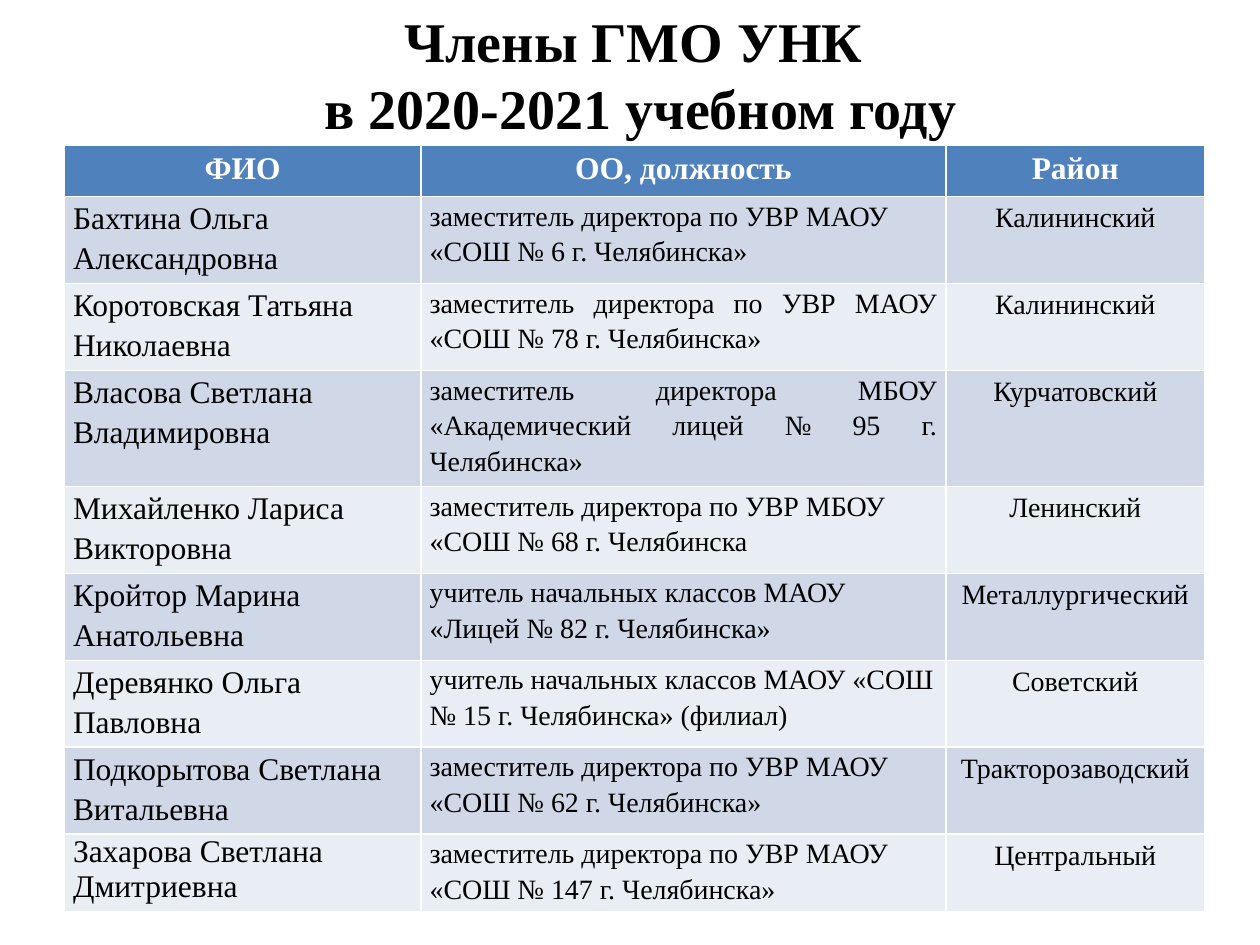
import pptx
import pptx.dml.color
import pptx.enum.text
import pptx.util

Inches = pptx.util.Inches
Align = pptx.enum.text.PP_ALIGN

FONT = "Times New Roman"
BLACK, WHITE = "000000", "FFFFFF"
HEADER_FILL = "4F81BD"
BAND_FILLS = ("D0D8E8", "E9EDF4")
COLUMN_WIDTHS = (2.83, 4.17, 2.05)
HEADER_HEIGHT = 0.41

HEADINGS = ("ФИО", "ОО, должность", "Район")
# Name, post, district, row height
MEMBERS = (
    ("Бахтина Ольга Александровна",
     "заместитель директора по УВР МАОУ «СОШ № 6 г. Челябинска»", "Калининский", 0.69),
    ("Коротовская Татьяна Николаевна",
     "заместитель директора по УВР МАОУ «СОШ № 78 г. Челябинска»", "Калининский", 0.69),
    ("Власова Светлана Владимировна",
     "заместитель директора МБОУ «Академический лицей № 95 г. Челябинска»",
     "Курчатовский", 0.92),
    ("Михайленко Лариса Викторовна",
     "заместитель директора по УВР МБОУ «СОШ № 68 г. Челябинска", "Ленинский", 0.69),
    ("Кройтор Марина Анатольевна",
     "учитель начальных классов МАОУ «Лицей № 82 г. Челябинска»", "Металлургический", 0.69),
    ("Деревянко Ольга Павловна",
     "учитель начальных классов МАОУ «СОШ № 15 г. Челябинска» (филиал)", "Советский", 0.69),
    ("Подкорытова Светлана Витальевна",
     "заместитель директора по УВР МАОУ «СОШ № 62 г. Челябинска»", "Тракторозаводский", 0.69),
    ("Захарова Светлана Дмитриевна",
     "заместитель директора по УВР МАОУ «СОШ № 147 г. Челябинска»", "Центральный", 0.61),
)
JUSTIFIED_POSTS = (2, 3)


def color(value):
    return pptx.dml.color.RGBColor.from_string(value)


def write(frame, text, size=16, fill=BLACK, bold=False, align=Align.LEFT, spacing=None):
    """Write text, one paragraph per line, in one format."""
    frame.text = text
    for paragraph in frame.paragraphs:
        paragraph.alignment = align
        paragraph.line_spacing = spacing
        for run in paragraph.runs:
            run.font.name = FONT
            run.font.size = pptx.util.Pt(size)
            run.font.bold = bold
            run.font.color.rgb = color(fill)


def fill_cell(cell, text, background, narrow=False, **text_format):
    cell.fill.solid()
    cell.fill.fore_color.rgb = color(background)
    if narrow:
        cell.margin_left = cell.margin_right = Inches(0.07)
        cell.margin_top = cell.margin_bottom = 0
    write(cell.text_frame, text, **text_format)


def add_title(slide):
    title = slide.shapes.title
    title.left, title.top = Inches(0.61), Inches(0)
    title.width, title.height = Inches(8.95), Inches(1.18)
    frame = title.text_frame
    frame.vertical_anchor = pptx.enum.text.MSO_ANCHOR.TOP
    frame.auto_size = pptx.enum.text.MSO_AUTO_SIZE.SHAPE_TO_FIT_TEXT
    write(frame, "Члены ГМО УНК \nв 2020-2021 учебном году",
          size=32, bold=True, align=Align.CENTER)


def add_members_table(slide):
    heights = [HEADER_HEIGHT] + [member[-1] for member in MEMBERS]
    table = slide.shapes.add_table(
        len(heights), len(COLUMN_WIDTHS), Inches(0.51), Inches(1.15),
        Inches(sum(COLUMN_WIDTHS)), Inches(sum(heights))).table
    for column, width in zip(table.columns, COLUMN_WIDTHS):
        column.width = Inches(width)
    for row, height in zip(table.rows, heights):
        row.height = Inches(height)

    # Header row
    for column, heading in enumerate(HEADINGS):
        fill_cell(table.cell(0, column), heading, HEADER_FILL,
                  size=18, fill=WHITE, bold=True, align=Align.CENTER)

    # Member rows in alternating bands
    for row, (name, post, district, _) in enumerate(MEMBERS, start=1):
        band = BAND_FILLS[(row - 1) % 2]
        name_spacing = None if row == len(MEMBERS) else 1.15
        post_align = Align.JUSTIFY if row in JUSTIFIED_POSTS else Align.LEFT
        fill_cell(table.cell(row, 0), name, band, narrow=True,
                  size=18, spacing=name_spacing)
        fill_cell(table.cell(row, 1), post, band, narrow=True,
                  align=post_align, spacing=1.15)
        fill_cell(table.cell(row, 2), district, band, align=Align.CENTER)


def main():
    deck = pptx.Presentation()
    deck.slide_width, deck.slide_height = Inches(10), Inches(7.5)
    slide = deck.slides.add_slide(deck.slide_layouts.get_by_name("Title Only"))
    add_title(slide)
    add_members_table(slide)
    deck.save("out.pptx")


if __name__ == "__main__":
    main()
